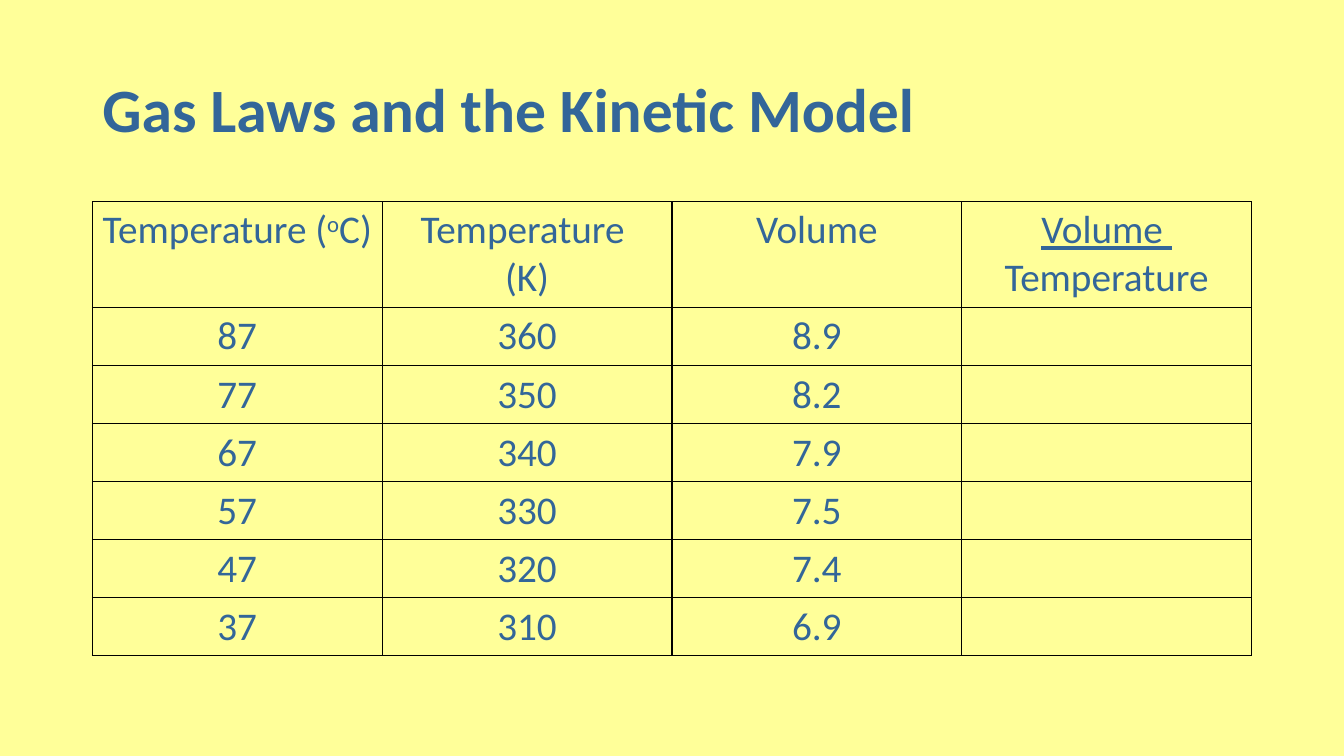
from dataclasses import dataclass

from lxml.etree import SubElement
from pptx import Presentation
from pptx.dml.color import RGBColor
from pptx.enum.text import MSO_ANCHOR, MSO_AUTO_SIZE, PP_ALIGN
from pptx.oxml.ns import qn
from pptx.util import Pt

EMU_PER_PX = 9525


@dataclass(frozen=True)
class Theme:
    font: str = "Calibri"
    background: str = "FFFF99"
    text: str = "336699"
    border: str = "000000"
    title_size: int = 44
    table_size: int = 28
    border_width: int = 1


def px(length):
    return length * EMU_PER_PX


class SlideBuilder:
    def __init__(self, presentation, theme):
        self.theme = theme
        self.slide = presentation.slides.add_slide(presentation.slide_layouts[5])
        fill = self.slide.background.fill
        fill.solid()
        fill.fore_color.rgb = RGBColor.from_string(theme.background)

    def style_font(self, font, size, bold=False):
        font.name = self.theme.font
        font.size = Pt(size)
        font.bold = bold
        font.color.rgb = RGBColor.from_string(self.theme.text)

    def title(self, text, left, top, width, height):
        shape = self.slide.shapes.title
        shape.left, shape.top = px(left), px(top)
        shape.width, shape.height = px(width), px(height)
        frame = shape.text_frame
        frame.text = text
        frame.word_wrap = True
        frame.auto_size = MSO_AUTO_SIZE.NONE
        frame.vertical_anchor = MSO_ANCHOR.MIDDLE
        paragraph = frame.paragraphs[0]
        paragraph.alignment = PP_ALIGN.LEFT
        paragraph.line_spacing = 0.9
        self.style_font(paragraph.runs[0].font, self.theme.title_size, bold=True)

    def table(self, headers, rows, left, top, width, header_height, row_height):
        height = header_height + row_height * len(rows)
        frame = self.slide.shapes.add_table(
            len(rows) + 1, len(headers), px(left), px(top), px(width), px(height)
        )
        table = frame.table
        table.first_row = False
        table.horz_banding = False
        for column in table.columns:
            column.width = px(width // len(headers))
        for index, row in enumerate(table.rows):
            row.height = px(row_height if index else header_height)
        for column, paragraphs in enumerate(headers):
            self.cell(table.cell(0, column), paragraphs)
        for index, values in enumerate(rows, start=1):
            for column, value in enumerate(values):
                self.cell(table.cell(index, column), [[(value, "")]])

    def cell(self, cell, paragraphs):
        self.borders(cell)
        cell.fill.background()
        frame = cell.text_frame
        for index, runs in enumerate(paragraphs):
            paragraph = frame.add_paragraph() if index else frame.paragraphs[0]
            paragraph.alignment = PP_ALIGN.CENTER
            for text, effect in runs:
                if text:
                    self.run(paragraph, text, effect)

    def run(self, paragraph, text, effect):
        run = paragraph.add_run()
        run.text = text
        self.style_font(run.font, self.theme.table_size)
        if effect == "underline":
            run.font.underline = True
        elif effect == "superscript":
            run._r.get_or_add_rPr().set("baseline", "30000")

    def borders(self, cell):
        properties = cell._tc.get_or_add_tcPr()
        for side in ("a:lnL", "a:lnR", "a:lnT", "a:lnB"):
            line = SubElement(properties, qn(side), w=str(Pt(self.theme.border_width)))
            fill = SubElement(line, qn("a:solidFill"))
            SubElement(fill, qn("a:srgbClr"), val=self.theme.border)


def main():
    presentation = Presentation()
    presentation.slide_width = px(1280)
    presentation.slide_height = px(720)
    builder = SlideBuilder(presentation, Theme())
    builder.title("Gas Laws and the Kinetic Model", 88, 38, 1104, 139)
    headers = [
        [[("Temperature (", ""), ("o", "superscript"), ("C)", "")]],
        [[("Temperature ", "")], [("(K)", "")]],
        [[("Volume", "")]],
        [[("Volume ", "underline"), (" Temperature", "")]],
    ]
    rows = [
        ("87", "360", "8.9", ""),
        ("77", "350", "8.2", ""),
        ("67", "340", "7.9", ""),
        ("57", "330", "7.5", ""),
        ("47", "320", "7.4", ""),
        ("37", "310", "6.9", ""),
    ]
    builder.table(headers, rows, 88, 192, 1104, 101, 55)
    presentation.save("out.pptx")


if __name__ == "__main__":
    main()
